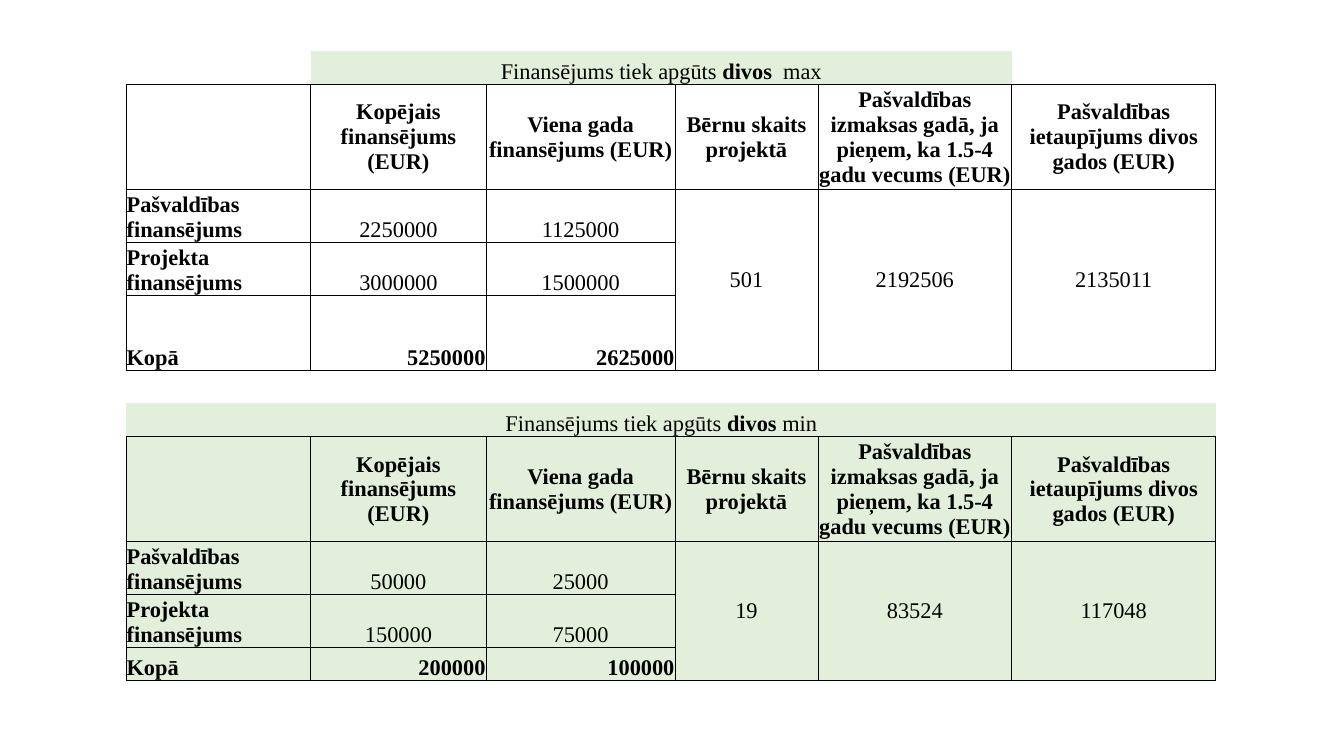
from dataclasses import dataclass

from lxml import etree
from pptx import Presentation
from pptx.dml.color import RGBColor
from pptx.enum.text import MSO_ANCHOR as Anchor, PP_ALIGN as Align
from pptx.oxml.ns import qn
from pptx.table import Table, _Cell as Cell
from pptx.util import Pt

FONT, SIZE = "Times New Roman", 16
BLACK, GREEN = "000000", "E2EFDA"
LEFT, TOP = 90, 36.5
COL_WIDTHS = [132, 125.25, 135, 102, 138.5, 145.75]
TITLE_H, HEAD_H, ITEM_H = 23.7, 75.2, 37.75
ALL_SIDES = "LRTB"

HEADINGS = [
    "Kopējais finansējums (EUR)",
    "Viena gada finansējums (EUR)",
    "Bērnu skaits projektā",
    "Pašvaldības izmaksas gadā, ja pieņem, ka 1.5-4 gadu vecums (EUR)",
    "Pašvaldības ietaupījums divos gados (EUR)",
]
ITEMS = ["Pašvaldības finansējums", "Projekta finansējums", "Kopā"]


@dataclass
class Scenario:
    suffix: str
    amounts: list[tuple[str, str]]  # one pair for each item
    results: list[str]  # merged cells on the right
    total_h: float
    fill: str | None  # all cells but the middle of the title row


SCENARIOS = [
    Scenario("  max",
             [("2250000", "1125000"), ("3000000", "1500000"), ("5250000", "2625000")],
             ["501", "2192506", "2135011"], 53.5, None),
    Scenario(" min",
             [("50000", "25000"), ("150000", "75000"), ("200000", "100000")],
             ["19", "83524", "117048"], TITLE_H, GREEN),
]


def rgb(value: str) -> RGBColor:
    return RGBColor.from_string(value)


def style_cell(cell: Cell, sides: str, fill: str | None) -> None:
    """Set margins, the listed borders and the fill."""
    cell.margin_left = cell.margin_right = cell.margin_top = Pt(0.5)
    cell.margin_bottom = Pt(0)
    tc_pr = cell._tc.get_or_add_tcPr()
    for side in ALL_SIDES:
        ln = etree.SubElement(tc_pr, qn(f"a:ln{side}"), w=str(Pt(0.5)))
        if side in sides:
            solid = etree.SubElement(ln, qn("a:solidFill"))
            etree.SubElement(solid, qn("a:srgbClr"), val=BLACK)
        else:
            etree.SubElement(ln, qn("a:noFill"))
    if fill:
        cell.fill.solid()
        cell.fill.fore_color.rgb = rgb(fill)
    else:
        cell.fill.background()


def write(cell: Cell, runs: list[tuple[str, bool]], align: Align = Align.CENTER,
          anchor: Anchor = Anchor.BOTTOM) -> None:
    cell.vertical_anchor = anchor
    p = cell.text_frame.paragraphs[0]
    p.alignment = align
    for text, bold in runs:
        r = p.add_run()
        r.text = text
        r.font.name, r.font.size, r.font.bold = FONT, Pt(SIZE), bold
        r.font.color.rgb = rgb(BLACK)


def fill_scenario(table: Table, top: int, sc: Scenario) -> None:
    last_col = len(COL_WIDTHS) - 1
    total = len(ITEMS) - 1

    # Cell styles: the title row only has a line below
    for row in range(top, top + 2 + len(ITEMS)):
        for col in range(len(COL_WIDTHS)):
            in_title = row == top
            fill = GREEN if in_title and 0 < col < last_col else sc.fill
            style_cell(table.cell(row, col), "B" if in_title else ALL_SIDES, fill)

    # Title and column headings
    title = table.cell(top, 1)
    title.merge(table.cell(top, last_col - 1))
    write(title, [("Finansējums tiek apgūts ", False), ("divos", True), (sc.suffix, False)])
    for col, heading in enumerate(HEADINGS, 1):
        write(table.cell(top + 1, col), [(heading, True)], anchor=Anchor.MIDDLE)

    # Items with their amounts, the total in bold
    first = top + 2
    for i, (item, amounts) in enumerate(zip(ITEMS, sc.amounts)):
        write(table.cell(first + i, 0), [(item, True)], Align.LEFT)
        for col, amount in enumerate(amounts, 1):
            write(table.cell(first + i, col), [(amount, i == total)],
                  Align.RIGHT if i == total else Align.CENTER)

    # Results over all items
    for col, result in enumerate(sc.results, 3):
        cell = table.cell(first, col)
        cell.merge(table.cell(first + total, col))
        write(cell, [(result, False)], anchor=Anchor.MIDDLE)


def main() -> None:
    prs = Presentation()
    prs.slide_width, prs.slide_height = Pt(960), Pt(540)
    s = prs.slides.add_slide(prs.slide_layouts[6])

    # Table grid: two scenarios with a gap row between
    blocks = [[TITLE_H, HEAD_H, ITEM_H, ITEM_H, sc.total_h] for sc in SCENARIOS]
    heights = blocks[0] + [TITLE_H] + blocks[1]
    gap = len(blocks[0])
    table = s.shapes.add_table(len(heights), len(COL_WIDTHS), Pt(LEFT), Pt(TOP),
                               Pt(sum(COL_WIDTHS)), Pt(sum(heights))).table
    table.first_row = table.horz_banding = False
    for column, width in zip(table.columns, COL_WIDTHS):
        column.width = Pt(width)
    for row, height in zip(table.rows, heights):
        row.height = Pt(height)

    # Contents
    for cell in table.rows[gap].cells:
        style_cell(cell, "T", None)
    for i, sc in enumerate(SCENARIOS):
        fill_scenario(table, i * (gap + 1), sc)

    prs.save("out.pptx")


if __name__ == "__main__":
    main()
